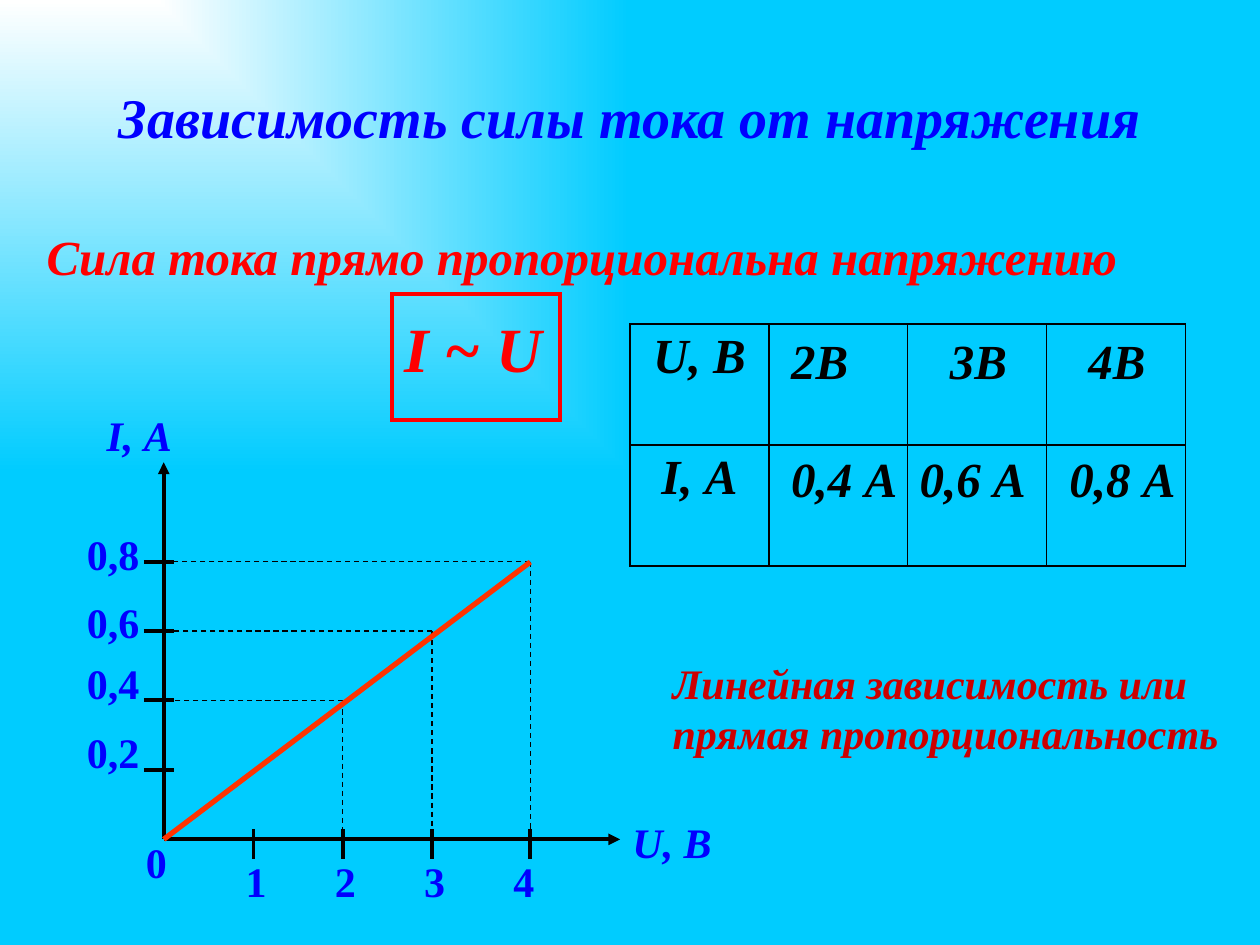
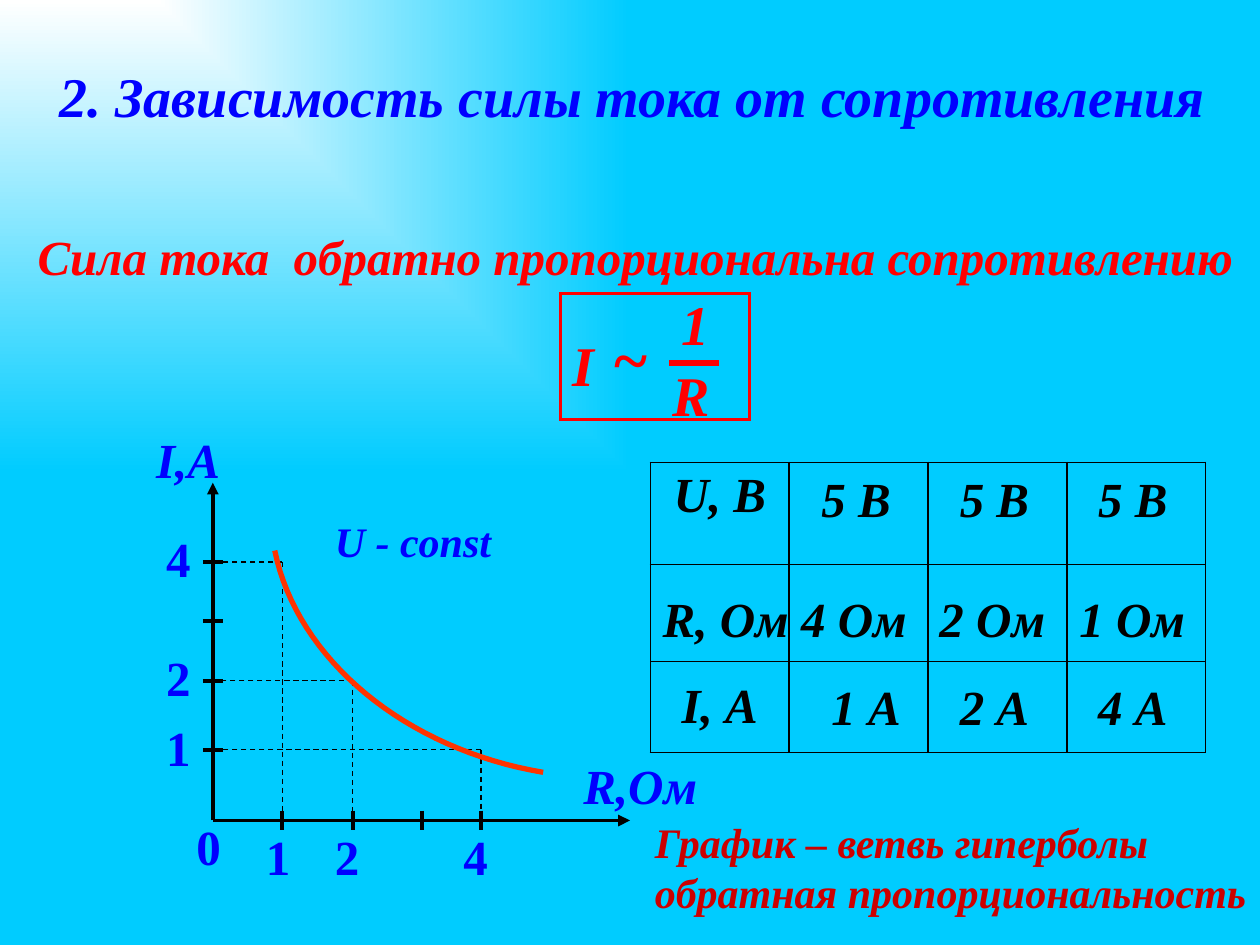
from dataclasses import dataclass
from typing import NamedTuple

from lxml import etree
from pptx import Presentation
from pptx.dml.color import RGBColor
from pptx.enum.dml import MSO_LINE
from pptx.enum.shapes import MSO_CONNECTOR, MSO_SHAPE
from pptx.enum.text import MSO_ANCHOR, MSO_AUTO_SIZE, PP_ALIGN
from pptx.oxml.ns import qn
from pptx.util import Cm, Pt


# Theme: colours, font, type sizes and line widths (points)
@dataclass(frozen=True)
class Theme:
    font: str = "Times New Roman"
    blue: str = "0000FF"
    red: str = "FF0000"
    dark_red: str = "CC0000"
    curve: str = "FF3300"
    black: str = "000000"
    white: str = "FFFFFF"
    sky: str = "00CCFF"
    small: int = 24
    medium: int = 28
    large: int = 32
    formula: int = 36
    thin: float = 0.75
    axis: float = 2.25
    bold_line: float = 3


THEME = Theme()


# Repeated elements; all lengths are centimetres
class Point(NamedTuple):
    x: float
    y: float


class Label(NamedTuple):
    text: str
    left: float
    top: float
    width: float


class LabelRow(NamedTuple):
    texts: tuple[str, ...]
    lefts: tuple[float, ...]
    top: float
    width: float


@dataclass(frozen=True)
class Graph:
    origin: Point
    x_end: float
    y_end: float
    x_ticks: tuple[float, ...]
    y_ticks: tuple[float, ...]
    guides: tuple[tuple[int, int], ...]  # tick numbers of each marked point
    tick_outside: float
    names: tuple[Label, ...]
    values: tuple[Label, ...]
    size: int


@dataclass(frozen=True)
class ValueTable:
    left: float
    top: float
    row_heights: tuple[float, ...]
    heads: tuple[str, ...]
    anchors: tuple[MSO_ANCHOR, ...]
    rows: tuple[LabelRow, ...]


# Text
def format_text(frame, text: str, *, size: int, color: str, italic: bool = True,
                align: PP_ALIGN = PP_ALIGN.LEFT) -> None:
    for number, line in enumerate(text.split("\n")):
        paragraph = frame.add_paragraph() if number else frame.paragraphs[0]
        paragraph.alignment = align
        run = paragraph.add_run()
        run.text = line
        run.font.name = THEME.font
        run.font.size = Pt(size)
        run.font.bold = True
        run.font.italic = italic
        run.font.color.rgb = RGBColor.from_string(color)


def add_text(slide, label: Label, *, height: float = 0, wrap: bool = False,
             anchor: MSO_ANCHOR = MSO_ANCHOR.TOP, **style) -> None:
    lines = label.text.count("\n") + 1
    box_height = height or 0.04 * style["size"] * lines + 0.32
    shape = slide.shapes.add_textbox(Cm(label.left), Cm(label.top),
                                     Cm(label.width), Cm(box_height))
    frame = shape.text_frame
    frame.word_wrap = wrap
    frame.auto_size = MSO_AUTO_SIZE.NONE if wrap else MSO_AUTO_SIZE.SHAPE_TO_FIT_TEXT
    frame.vertical_anchor = anchor
    format_text(frame, label.text, **style)


# Lines and shapes
def add_line(slide, start: Point, end: Point, *, color: str = THEME.black,
             width: float = THEME.axis, dashed: bool = False, arrow: bool = False) -> None:
    connector = slide.shapes.add_connector(
        MSO_CONNECTOR.STRAIGHT, Cm(start.x), Cm(start.y), Cm(end.x), Cm(end.y))
    line = connector.line
    line.color.rgb = RGBColor.from_string(color)
    line.width = Pt(width)
    if dashed:
        line.dash_style = MSO_LINE.DASH
    properties = connector.element.find(qn("p:spPr"))
    if arrow:
        etree.SubElement(properties.find(qn("a:ln")), qn("a:tailEnd"), type="triangle")
    etree.SubElement(properties, qn("a:effectLst"))


def outline(shape, color: str, width: float) -> None:
    shape.shadow.inherit = False
    shape.fill.background()
    shape.line.color.rgb = RGBColor.from_string(color)
    shape.line.width = Pt(width)
    line = next(shape.element.iter(qn("a:ln")))
    etree.SubElement(line, qn("a:miter"), lim="800000")


def add_frame(slide, left: float, width: float, line_width: float) -> None:
    shape = slide.shapes.add_shape(MSO_SHAPE.RECTANGLE, Cm(left), Cm(5.92),
                                   Cm(width), Cm(2.54))
    outline(shape, THEME.red, line_width)


def add_curve(slide, controls: tuple[Point, ...], steps: int = 32) -> None:
    """Draw a cubic Bezier curve as a fine open outline."""
    points = []
    for step in range(steps + 1):
        t = step / steps
        weights = ((1 - t) ** 3, 3 * t * (1 - t) ** 2, 3 * t * t * (1 - t), t ** 3)
        points.append(tuple(int(Cm(sum(w * c for w, c in zip(weights, axis))))
                            for axis in zip(*controls)))
    builder = slide.shapes.build_freeform(*points[0])
    builder.add_line_segments(points[1:], close=False)
    outline(builder.convert_to_shape(), THEME.curve, THEME.bold_line)


# Graph with axes, ticks, guides and labels
def draw_graph(slide, graph: Graph) -> None:
    x0, y0 = graph.origin
    inside, outside = 0.2, graph.tick_outside
    add_line(slide, graph.origin, Point(x0, graph.y_end), arrow=True)
    add_line(slide, graph.origin, Point(graph.x_end, y0), arrow=True)
    for x_number, y_number in graph.guides:
        point = Point(graph.x_ticks[x_number], graph.y_ticks[y_number])
        for foot in (Point(point.x, y0), Point(x0, point.y)):
            add_line(slide, point, foot, width=THEME.thin, dashed=True)
    for x in graph.x_ticks:
        add_line(slide, Point(x, y0 - inside), Point(x, y0 + outside))
    for y in graph.y_ticks:
        add_line(slide, Point(x0 - outside, y), Point(x0 + inside, y))
    for label in graph.names:
        add_text(slide, label, size=graph.size, color=THEME.blue)
    for label in graph.values:
        add_text(slide, label, size=graph.size, color=THEME.blue, italic=False)


# Table with row heads in the first column and values laid over the grid
def set_borders(cell) -> None:
    properties = cell._tc.get_or_add_tcPr()
    for side in ("a:lnL", "a:lnR", "a:lnT", "a:lnB"):
        border = etree.SubElement(properties, qn(side), w=str(Pt(1)))
        fill = etree.SubElement(border, qn("a:solidFill"))
        etree.SubElement(fill, qn("a:srgbClr"), val=THEME.black)


def draw_table(slide, data: ValueTable) -> None:
    columns, column_width = 4, 2.8
    style = dict(size=THEME.medium, color=THEME.black)
    table = slide.shapes.add_table(
        len(data.heads), columns, Cm(data.left), Cm(data.top),
        Cm(columns * column_width), Cm(sum(data.row_heights))).table
    table.first_row = table.horz_banding = False
    for column in table.columns:
        column.width = Cm(column_width)
    for row, height in zip(table.rows, data.row_heights):
        row.height = Cm(height)
        for cell in row.cells:
            set_borders(cell)
            cell.fill.background()
    for number, (head, anchor) in enumerate(zip(data.heads, data.anchors)):
        cell = table.cell(number, 0)
        cell.vertical_anchor = anchor
        if anchor == MSO_ANCHOR.BOTTOM:
            cell.margin_bottom = Cm(0.38)
        format_text(cell.text_frame, head, align=PP_ALIGN.CENTER, **style)
    for row in data.rows:
        for text, left in zip(row.texts, row.lefts):
            add_text(slide, Label(text, left, row.top, row.width), **style)


# Shared slide parts: background, title, law and conclusion
def add_slide(presentation, title: Label, law: Label, conclusion: Label):
    slide = presentation.slides.add_slide(presentation.slide_layouts[6])
    fill = slide.background.fill
    fill.gradient()
    for stop, color in zip(fill.gradient_stops, (THEME.white, THEME.sky)):
        stop.color.rgb = RGBColor.from_string(color)
    gradient = next(slide.element.iter(qn("a:gradFill")))
    gradient.remove(gradient.find(qn("a:lin")))
    shade = etree.SubElement(gradient, qn("a:path"), {"path": "rect"})
    etree.SubElement(shade, qn("a:fillToRect"), r="100000", b="100000")

    add_text(slide, title, height=3.18, wrap=True, anchor=MSO_ANCHOR.MIDDLE,
             size=THEME.large, color=THEME.blue, align=PP_ALIGN.CENTER)
    add_text(slide, law, height=1.7, wrap=True, size=THEME.medium, color=THEME.red)
    add_text(slide, conclusion, size=THEME.small, color=THEME.dark_red)
    return slide


def build_voltage_slide(presentation) -> None:
    slide = add_slide(
        presentation,
        Label("Зависимость силы тока от напряжения", 1.27, 0.76, 22.86),
        Label("Сила тока прямо пропорциональна напряжению", 0.69, 4.45, 24.71),
        Label("Линейная зависимость или\nпрямая пропорциональность", 13.31, 13.13, 11.53))
    origin = Point(3.3, 16.92)
    y_values = zip(("0,2", "0,4", "0,6", "0,8"), (14.53, 13.13, 11.91, 10.52))
    draw_graph(slide, Graph(
        origin, 12.5, 9.32,
        x_ticks=(5.11, 6.91, 8.71, 10.69),
        y_ticks=tuple(15.52 - 1.4 * step for step in range(4)),
        guides=((1, 1), (2, 2), (3, 3)),
        tick_outside=0.4,
        names=(Label("I, А", 1.9, 8.13, 1.83), Label("U, B", 12.5, 16.33, 2.11)),
        values=(Label("0", 2.69, 16.74, 0.94),
                *(Label(text, 1.5, top, 1.57) for text, top in y_values),
                *(Label(str(n), 2.9 + 1.8 * n, 17.12, 0.94) for n in range(1, 5))),
        size=THEME.small))
    add_line(slide, origin, Point(10.69, 11.33), color=THEME.curve, width=THEME.bold_line)

    # Formula
    add_text(slide, Label("I ~ U", 7.9, 6.12, 3.28), size=THEME.formula, color=THEME.red)
    add_frame(slide, 7.9, 3.4, THEME.axis)

    draw_table(slide, ValueTable(
        12.7, 6.53, (2.44, 2.44), ("U, В", "I, А"), (MSO_ANCHOR.TOP, MSO_ANCHOR.TOP),
        (LabelRow(("2В", "3В", "4В"), (15.7, 18.9, 21.69), 6.53, 1.75),
         LabelRow(("0,4 А", "0,6 А", "0,8 А"), (15.7, 18.29, 21.31), 8.92, 2.64))))


def build_resistance_slide(presentation) -> None:
    slide = add_slide(
        presentation,
        Label("2. Зависимость силы тока от сопротивления", 0.69, 0.33, 24.13),
        Label("Сила тока  обратно пропорциональна сопротивлению", 0.51, 4.45, 24.89),
        Label("График – ветвь гиперболы\nобратная пропорциональность", 12.95, 16.33, 12.45))
    x_values = zip(("1", "2", "4"), (5.11, 6.5, 9.09))
    y_values = zip(("1", "2", "4"), (14.33, 12.93, 10.52))
    draw_graph(slide, Graph(
        Point(4.29, 16.54), 12.7, 9.73,
        x_ticks=(5.69, 7.11, 8.51, 9.7),
        y_ticks=(15.11, 13.72, 12.52, 11.33),
        guides=((0, 3), (1, 1), (3, 0)),
        tick_outside=0.2,
        names=(Label("I,А", 2.9, 8.53, 1.85), Label("R,Ом", 11.51, 15.11, 2.95)),
        values=(Label("0", 3.71, 16.33, 1.02),
                *(Label(text, left, 16.54, 1.02) for text, left in x_values),
                *(Label(text, 3.1, top, 1.02) for text, top in y_values)),
        size=THEME.medium))
    add_curve(slide, (Point(10.95, 15.57), Point(8.2, 15.11),
                      Point(5.99, 13.31), Point(5.54, 11.1)))
    add_text(slide, Label("U - const", 6.5, 10.26, 3.66), size=THEME.small, color=THEME.blue)

    # Formula
    for label in (Label("I", 11.3, 6.53, 0.97), Label("1", 13.49, 5.72, 1.07),
                  Label("R", 13.31, 7.14, 1.27)):
        add_text(slide, label, size=THEME.large, color=THEME.red)
    add_text(slide, Label("~", 12.09, 6.32, 1.24), size=THEME.formula, color=THEME.red)
    add_line(slide, Point(13.49, 7.32), Point(14.5, 7.32),
             color=THEME.red, width=THEME.bold_line)
    add_frame(slide, 11.3, 3.81, 1.5)

    value_lefts = (16.31, 19.1, 21.89)
    draw_table(slide, ValueTable(
        13.11, 9.32, (2.06, 3.79), ("U, В", "I, А"), (MSO_ANCHOR.TOP, MSO_ANCHOR.BOTTOM),
        (LabelRow(("5 В",) * 3, value_lefts, 9.32, 1.95),
         LabelRow(("R, Ом",), (13.11,), 11.73, 3.05),
         LabelRow(("4 Ом", "2 Ом", "1 Ом"), (15.9, 18.69, 21.51), 11.73, 2.64),
         LabelRow(("1 А", "2 А", "4 А"), (16.51, *value_lefts[1:]), 13.51, 1.95))))
    add_line(slide, Point(13.11, 13.34), Point(24.31, 13.34), width=THEME.thin)


def main() -> None:
    presentation = Presentation()
    presentation.slide_width = Cm(25.4)
    presentation.slide_height = Cm(19.05)
    build_voltage_slide(presentation)
    build_resistance_slide(presentation)
    presentation.save("out.pptx")


if __name__ == "__main__":
    main()
